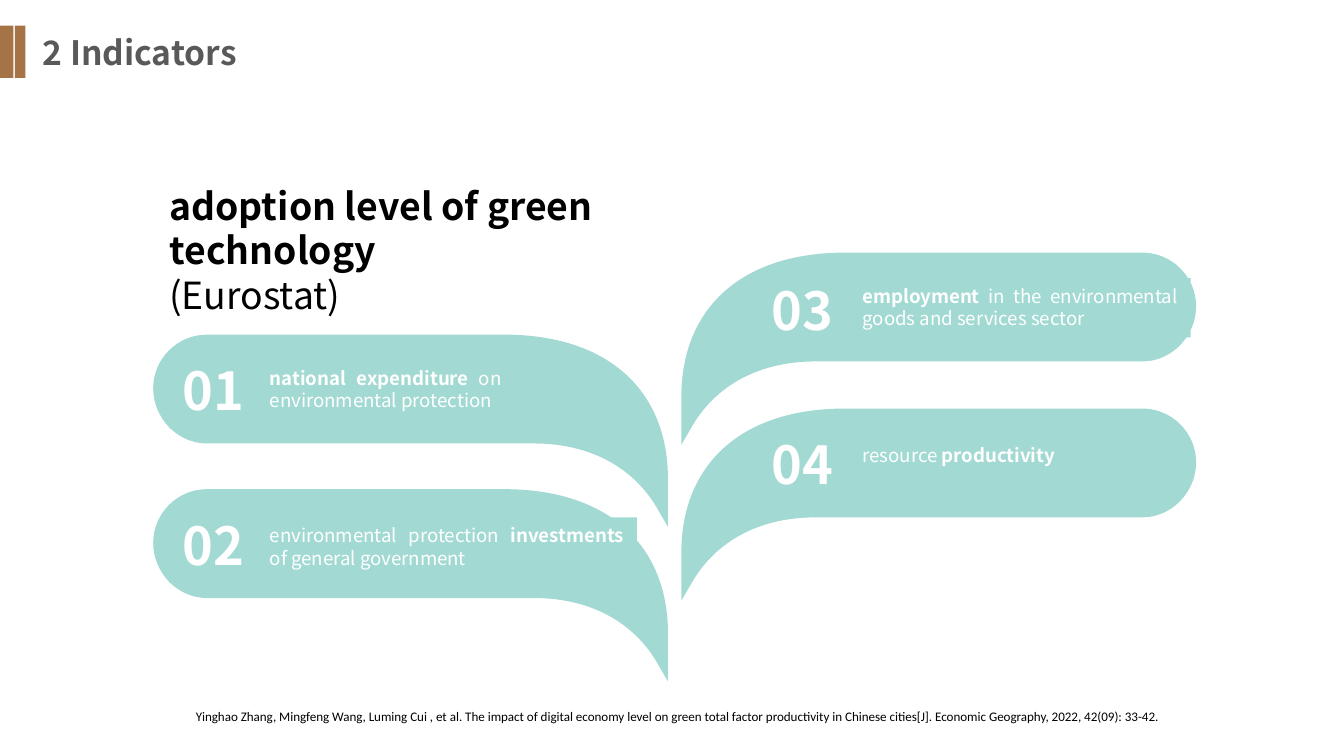
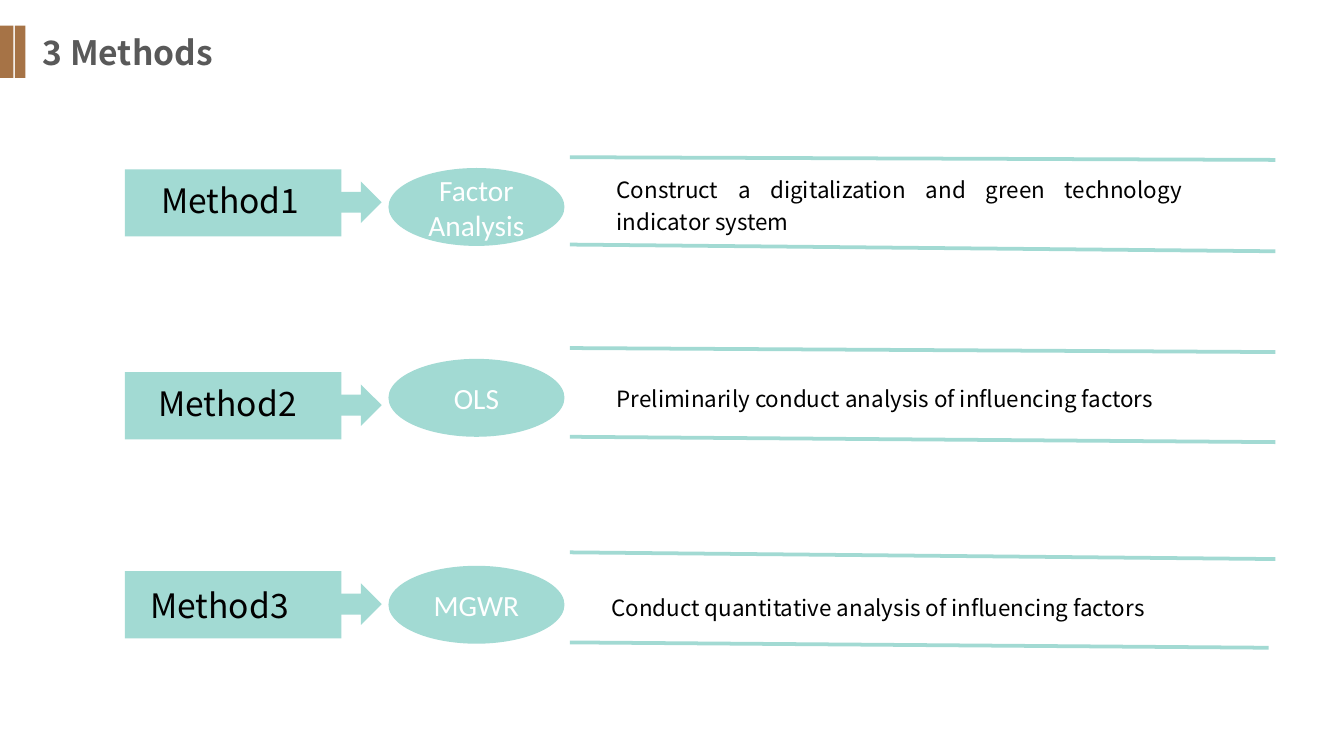
"""Build two slides: green technology indicators and analysis methods."""
from dataclasses import dataclass

from pptx import Presentation
from pptx.dml.color import RGBColor
from pptx.enum.shapes import MSO_CONNECTOR, MSO_SHAPE
from pptx.enum.text import MSO_ANCHOR, MSO_AUTO_SIZE, PP_ALIGN
from pptx.oxml.ns import qn
from pptx.oxml.xmlchemy import OxmlElement
from pptx.util import Inches, Pt

RECT, OVAL, ARROW = MSO_SHAPE.RECTANGLE, MSO_SHAPE.OVAL, MSO_SHAPE.RIGHT_ARROW
STRAIGHT = MSO_CONNECTOR.STRAIGHT
LEFT, CENTER, JUSTIFY = PP_ALIGN.LEFT, PP_ALIGN.CENTER, PP_ALIGN.JUSTIFY
TOP, MIDDLE = MSO_ANCHOR.TOP, MSO_ANCHOR.MIDDLE
GROW, FIXED = MSO_AUTO_SIZE.SHAPE_TO_FIT_TEXT, MSO_AUTO_SIZE.NONE


@dataclass(frozen=True)
class Theme:
    mint: RGBColor = RGBColor.from_string("A2DAD3")
    brown: RGBColor = RGBColor.from_string("A67346")
    grey: RGBColor = RGBColor.from_string("595959")
    black: RGBColor = RGBColor.from_string("000000")
    white: RGBColor = RGBColor.from_string("FFFFFF")
    sans: str = "Noto Sans CJK SC"
    plain: str = "Calibri"
    title: float = 18
    heading: float = 20
    number: float = 28
    leaf: float = 10
    method: float = 18
    name: float = 15.7
    detail: float = 12
    citation: float = 7
    rule: float = 2


THEME = Theme()

HEADING = [
    [("adoption level of green technology", True)],
    [("(Eurostat)", False)],
]
CITATION = (
    "Yinghao Zhang, Mingfeng Wang, Luming Cui , et al. The impact of digital "
    "economy level on green total factor productivity in Chinese cities[J]. "
    "Economic Geography, 2022, 42(09): 33-42."
)

# number, mirrored, leaf top, number offset, text box offset, width and height, runs
INDICATORS = [
    ("01", False, 2.49, 0.13, 0.19, 1.92, 0.44,
     [("national expenditure ", True), ("on environmental protection", False)]),
    ("02", False, 3.64, 0.13, 0.21, 2.83, 0.44,
     [("environmental protection ", False), ("investments ", True),
      ("of general government", False)]),
    ("03", True, 1.88, 0.14, 0.19, 2.54, 0.44,
     [("employment", True),
      (" in the environmental goods and services sector", False)]),
    ("04", True, 3.04, 0.13, 0.21, 2.28, 0.27,
     [("resource ", False), ("productivity", True)]),
]

LEAF_W = 3.83
LEAF_START = (0.4, 0.81)
LEAF_SEGMENTS = [
    [(2.83, 0.81)],
    [(3.29, 0.81), (3.6, 1.02), (3.76, 1.31)],
    [(3.83, 1.43)],
    [(3.83, 1.07)],
    [(3.83, 0.44), (3.41, 0), (2.61, 0)],
    [(0.4, 0)],
    [(0.18, 0), (0, 0.18), (0, 0.4)],
    [(0, 0.62), (0.18, 0.81), (0.4, 0.81)],
]

# label, label position, box top, name, oval top, detail, detail box, rules
METHODS = [
    ("Method1", (1.1, 1.29), 1.26, "Factor Analysis", 1.25,
     "Construct a digitalization and green technology indicator system",
     (4.49, 1.22, 4.41, 0.57), [(1.17, 9.49, 1.19), (1.82, 9.49, 1.87)]),
    ("Method2", (1.08, 2.8), 2.77, "OLS", 2.67,
     "Preliminarily conduct analysis of influencing factors",
     (4.49, 2.78, 4.41, 0.32), [(2.59, 9.49, 2.62), (3.25, 9.49, 3.29)]),
    ("Method3", (1.02, 4.3), 4.25, "MGWR", 4.21,
     "Conduct quantitative analysis of influencing factors",
     (4.45, 4.33, 4.41, 0.32), [(4.11, 9.49, 4.16), (4.78, 9.44, 4.82)]),
]


def paint(sp, color):
    sp.shadow.inherit = False
    sp.fill.solid()
    sp.fill.fore_color.rgb = color
    sp.line.fill.background()
    return sp


def add_block(shapes, kind, box, color):
    return paint(shapes.add_shape(kind, *map(Inches, box)), color)


def write(sp, paragraphs, size, color, font=THEME.sans, align=LEFT,
          anchor=TOP, wrap=True, fit=GROW, spacing=None):
    tf = sp.text_frame
    tf.word_wrap, tf.auto_size, tf.vertical_anchor = wrap, fit, anchor
    for i, runs in enumerate(paragraphs):
        p = tf.add_paragraph() if i else tf.paragraphs[0]
        p.alignment = align
        if spacing:
            p.line_spacing = spacing
        for text, bold in runs:
            r = p.add_run()
            r.text = text
            r.font.name, r.font.size, r.font.bold = font, Pt(size), bold
            r.font.color.rgb = color


def add_text(s, box, paragraphs, size, color, **style):
    sp = s.shapes.add_textbox(*map(Inches, box))
    write(sp, paragraphs, size, color, **style)
    return sp


def add_slide(prs, title):
    s = prs.slides.add_slide(prs.slide_layouts[6])
    add_text(s, (0.22, 0.19, 2.47, 0.4), [[(title, True)]], THEME.title, THEME.grey)
    for x, w in ((0, 0.1), (0.11, 0.08)):
        add_block(s.shapes, RECT, (x, 0.19, w, 0.39), THEME.brown)
    return s


def add_leaf(shapes, left, top, mirrored):
    def place(point):
        x, y = point
        return Inches(left + (LEAF_W - x if mirrored else x)), Inches(top + y)

    builder = shapes.build_freeform(*place(LEAF_START))
    builder.add_line_segments([place(pt) for seg in LEAF_SEGMENTS for pt in seg])
    sp = paint(builder.convert_to_shape(), THEME.mint)
    outline = sp._element.xpath(".//a:path")[0]
    nodes = iter(outline.findall(qn("a:lnTo")))
    for seg in LEAF_SEGMENTS:
        group = [next(nodes) for _ in seg]
        if len(group) == 3:
            curve = OxmlElement("a:cubicBezTo")
            group[0].addprevious(curve)
            for node in group:
                curve.append(node[0])
                outline.remove(node)


def add_indicator(s, number, mirrored, top, number_dy, text_dy, w, h, runs):
    left, number_x, text_x = (5.07, 5.64, 6.32) if mirrored else (1.14, 1.26, 1.91)
    shapes = s.shapes.add_group_shape().shapes
    add_leaf(shapes, left, top, mirrored)
    sp = add_block(shapes, RECT, (text_x, top + text_dy, w, h), THEME.mint)
    write(sp, [runs], THEME.leaf, THEME.white, align=JUSTIFY)
    sp = add_block(shapes, RECT, (number_x, top + number_dy, 0.69, 0.57), THEME.mint)
    write(sp, [[(number, True)]], THEME.number, THEME.white, wrap=False)


def add_rule(s, y1, x2, y2):
    ln = s.shapes.add_connector(STRAIGHT, *map(Inches, (4.24, y1, x2, y2)))
    ln.line.color.rgb = THEME.mint
    ln.line.width = Pt(THEME.rule)
    ln._element.spPr.append(OxmlElement("a:effectLst"))


def add_method(s, label, label_at, box_top, name, oval_top, detail, detail_box, rules):
    shapes = s.shapes.add_group_shape().shapes
    add_block(shapes, ARROW, (2.46, box_top + 0.09, 0.38, 0.31), THEME.mint)
    add_block(shapes, RECT, (0.93, box_top, 1.61, 0.5), THEME.mint)
    add_text(s, (*label_at, 1.45, 0.4), [[(label, False)]], THEME.method, THEME.black)
    sp = add_block(s.shapes, OVAL, (2.89, oval_top, 1.31, 0.58), THEME.mint)
    write(sp, [[(name, False)]], THEME.name, THEME.white, font=THEME.plain,
          align=CENTER, anchor=MIDDLE, fit=FIXED)
    add_text(s, detail_box, [[(detail, False)]], THEME.detail, THEME.black,
             align=JUSTIFY, spacing=1.2)
    for rule in rules:
        add_rule(s, *rule)


def main():
    prs = Presentation()
    prs.slide_width = Inches(10)
    prs.slide_height = Inches(10 * 9 / 16)

    s = add_slide(prs, "2 Indicators")
    sp = add_text(s, (1.26, 1.36, 4.13, 1.35), HEADING, THEME.heading, THEME.black)
    tf = sp.text_frame
    tf.margin_left = tf.margin_top = tf.margin_right = tf.margin_bottom = 0
    for indicator in INDICATORS:
        add_indicator(s, *indicator)
    add_text(s, (1.36, 5.22, 8.06, 0.22), [[(CITATION, False)]], THEME.citation,
             THEME.black, font=THEME.plain)

    s = add_slide(prs, "3 Methods")
    for method in METHODS:
        add_method(s, *method)

    prs.save("out.pptx")


if __name__ == "__main__":
    main()
